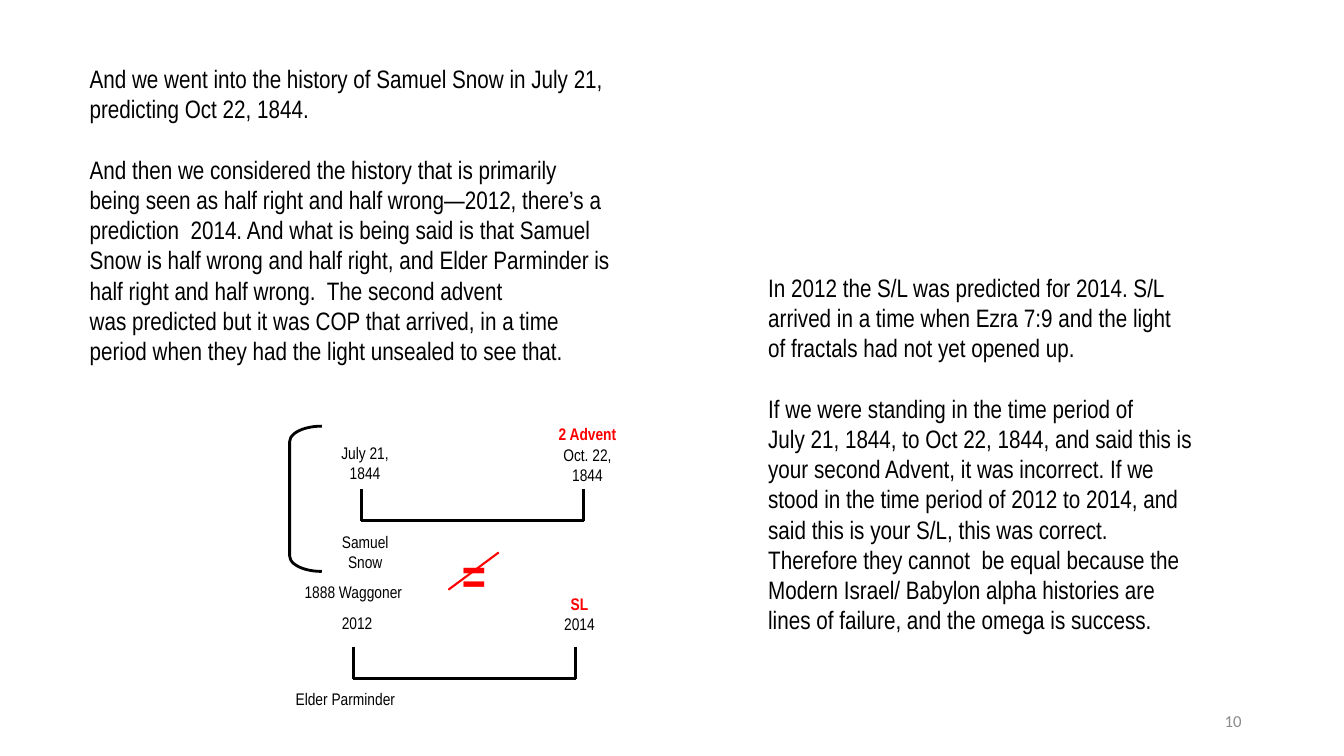
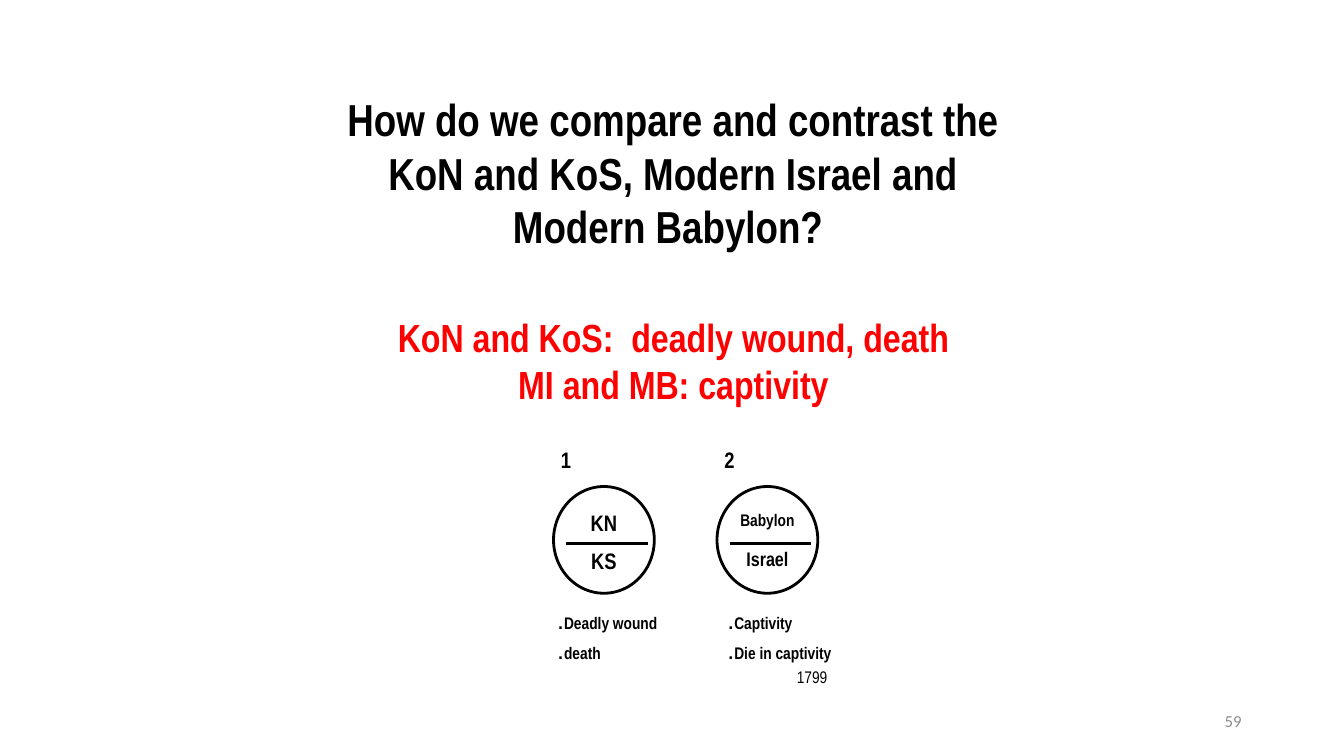
from lxml import etree
from pptx import Presentation
from pptx.dml.color import RGBColor
from pptx.enum.shapes import MSO_CONNECTOR, MSO_SHAPE
from pptx.enum.text import MSO_ANCHOR, PP_ALIGN
from pptx.oxml.ns import qn
from pptx.util import Cm, Pt

BLACK = RGBColor(0x00, 0x00, 0x00)
RED = RGBColor(0xFF, 0x00, 0x00)
GRAY = RGBColor(0x8C, 0x8C, 0x8C)
BODY_FONT = "Arial Narrow"
LEFT, CENTER, RIGHT = PP_ALIGN.LEFT, PP_ALIGN.CENTER, PP_ALIGN.RIGHT
MIDDLE = MSO_ANCHOR.MIDDLE
STRAIGHT = MSO_CONNECTOR.STRAIGHT
ELLIPSE, LEFT_BRACKET = MSO_SHAPE.OVAL, MSO_SHAPE.LEFT_BRACKET
LINE_WIDTH = Pt(2)
TIGHT = Cm(0.1)


def add_text(slide, box, lines, size, color=BLACK, bold=False, align=CENTER,
             font=BODY_FONT, inset=None, gap=0):
    """Add a wrapped text box, one paragraph per line; return its frame."""
    frame = slide.shapes.add_textbox(*map(Cm, box)).text_frame
    frame.word_wrap = True
    if inset is not None:
        frame.margin_left = frame.margin_right = inset
        frame.margin_top = frame.margin_bottom = inset
    for number, line in enumerate(lines):
        paragraph = frame.add_paragraph() if number else frame.paragraphs[0]
        paragraph.text = line
        paragraph.alignment = align
        paragraph.space_before = Pt(gap if number else 0)
        paragraph.font.name = font
        paragraph.font.size = Pt(size)
        paragraph.font.bold = bold
        paragraph.font.color.rgb = color
    return frame


def add_line(slide, start, end, color=BLACK, width=LINE_WIDTH):
    line = slide.shapes.add_connector(STRAIGHT, *map(Cm, start + end))
    line.line.color.rgb = color
    line.line.width = width
    etree.SubElement(line._element.spPr, qn("a:effectLst"))


prs = Presentation()
prs.slide_width, prs.slide_height = Cm(33.87), Cm(19.05)
history, comparison = (prs.slides.add_slide(prs.slide_layouts[6]) for _ in range(2))

for slide, page in ((history, "10"), (comparison, "59")):
    footer = add_text(slide, (23.92, 17.65, 7.62, 1.02), [page], 12, GRAY,
                      align=RIGHT, font="Calibri")
    footer.vertical_anchor = MIDDLE

# History: two columns of text
snow_story = [
    "And we went into the history of Samuel Snow in July 21, predicting Oct 22, 1844.",
    "And then we considered the history that is primarily being seen as half right "
    "and half wrong—2012, there’s a prediction  2014. And what is being said is that "
    "Samuel Snow is half wrong and half right, and Elder Parminder is half right and "
    "half wrong.  The second advent\nwas predicted but it was COP that arrived, in a "
    "time period when they had the light unsealed to see that.",
]
law_story = [
    "In 2012 the S/L was predicted for 2014. S/L arrived in a time when Ezra 7:9 and "
    "the light\nof fractals had not yet opened up.",
    "If we were standing in the time period of\nJuly 21, 1844, to Oct 22, 1844, and "
    "said this is your second Advent, it was incorrect. If we stood in the time "
    "period of 2012 to 2014, and said this is your S/L, this was correct. Therefore "
    "they cannot  be equal because the Modern Israel/ Babylon alpha histories are "
    "lines of failure, and the omega is success.",
]
for box, story in (((2.01, 1.47, 13.64, 8.46), snow_story),
                   ((19.11, 6.73, 11.43, 10), law_story)):
    add_text(history, box, story, 18, align=LEFT, gap=21.6)

# History: two timelines that are not equal
span, tick = 5.61, 0.8
for left, base in ((9.1, 13.12), (8.9, 17.1)):
    right = left + span
    add_line(history, (left, base), (right, base))
    for x in (left, right):
        add_line(history, (x, base - tick), (x, base))

for box, lines in (
    ((8.3, 11.05, 1.8, 1.27), ["July 21, 1844"]),
    ((8.1, 13.29, 2.21, 1.27), ["Samuel Snow"]),
    ((6.9, 14.55, 4.01, 0.79), ["1888 Waggoner"]),
    ((8.1, 15.34, 1.8, 0.97), ["2012"]),
    ((6.7, 17.25, 4.01, 0.79), ["Elder Parminder"]),
):
    add_text(history, box, lines, 12, inset=TIGHT)

for box, lines in (
    ((13.7, 10.59, 2.21, 1.75), ["2 Advent", "Oct. 22, 1844"]),
    ((13.5, 14.86, 2.21, 1.42), ["SL", "2014"]),
):
    event = add_text(history, box, lines, 12, inset=TIGHT).paragraphs[0]
    event.font.bold = True
    event.font.color.rgb = RED

bracket = history.shapes.add_shape(LEFT_BRACKET, Cm(7.3), Cm(10.74), Cm(0.81), Cm(3.66))
bracket.adjustments[0] = 0.48
add_text(history, (10.99, 13.6, 1.91, 1.57), ["="], 36, RED, True, inset=TIGHT)
add_line(history, (11.3, 14.86), (12.57, 13.92), RED, Pt(1.5))

# Comparison: question and answer
add_text(comparison, (8.13, 2.18, 17.68, 5.74),
         ["How do we compare and contrast the KoN and KoS, Modern Israel and "
          "Modern Babylon? "], 32, bold=True)
add_text(comparison, (8.5, 7.77, 16.94, 2.64),
         ["KoN and KoS:  deadly wound, death", "MI and MB: captivity"], 28, RED, True)

# Comparison: two divided circles with their notes
outlined = [bracket]
diameter, label_width = 2.54, 1.9
for number, left, notes_left, upper, lower, notes in (
    ("1", 13.95, 13.94, ("KN", 16), ("KS", 16), ("Deadly wound", "death")),
    ("2", 18.07, 18.23, ("Babylon", 12), ("Israel", 14), ("Captivity", "Die in captivity")),
):
    outlined.append(comparison.shapes.add_shape(
        ELLIPSE, Cm(left), Cm(12.26), Cm(diameter), Cm(2.69)))
    add_line(comparison, (left + 0.32, 13.69), (left + 2.38, 13.69))
    label_left = left + (diameter - label_width) / 2
    for (name, size), top in ((upper, 12.74), (lower, 13.69)):
        add_text(comparison, (label_left, top, label_width, 0.89), [name], size,
                 bold=True, inset=TIGHT)
    add_text(comparison, (left - 0.32, 11.15, 1.27, 0.89), [number], 16,
             bold=True, inset=TIGHT)
    frame = add_text(comparison, (notes_left, 15.12, 3.33, 1.57), ["."] * len(notes), 18,
                     align=LEFT, font="Arial", inset=TIGHT)
    for paragraph, note in zip(frame.paragraphs, notes):
        run = paragraph.add_run()
        run.text = note
        run.font.name = BODY_FONT
        run.font.size = Pt(12)
        run.font.bold = True
add_text(comparison, (19.98, 16.71, 1.57, 0.97), ["1799"], 12, align=LEFT, inset=TIGHT)

for shape in outlined:
    shape.shadow.inherit = False
    shape.fill.background()
    shape.line.color.rgb = BLACK
    shape.line.width = LINE_WIDTH

prs.save("out.pptx")
